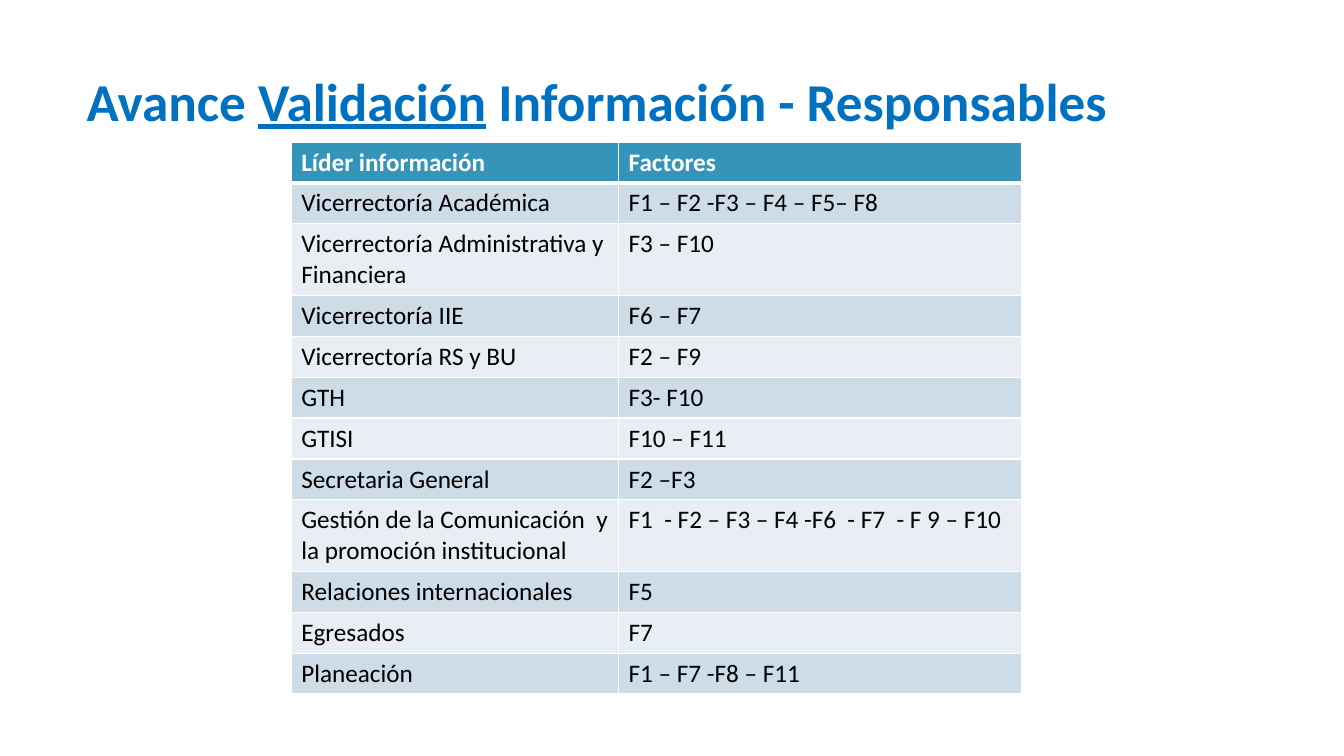
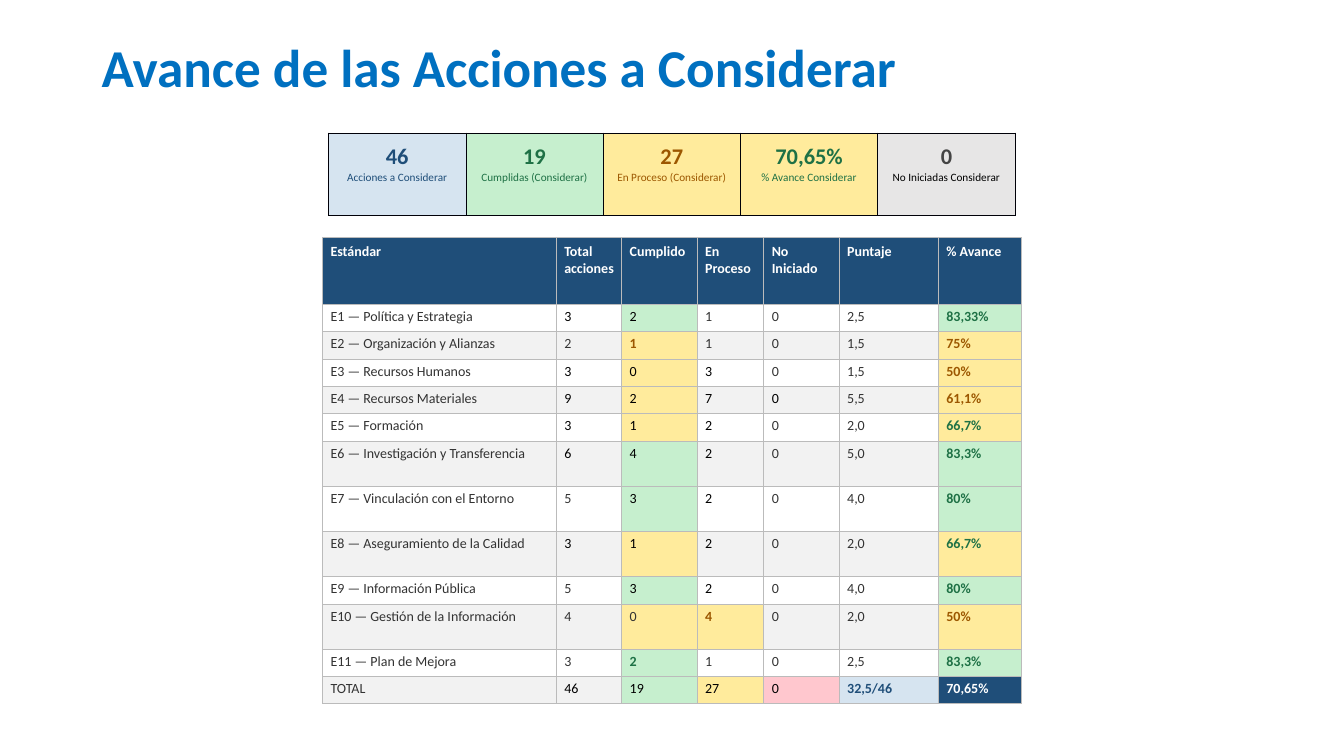
from lxml.etree import SubElement
from pptx import Presentation
from pptx.dml.color import RGBColor
from pptx.enum.text import MSO_ANCHOR, MSO_AUTO_SIZE, PP_ALIGN
from pptx.oxml.ns import qn
from pptx.util import Cm, Pt

# Colours
WHITE = RGBColor(0xFF, 0xFF, 0xFF)
BLACK = RGBColor(0x00, 0x00, 0x00)
TITLE_BLUE = RGBColor(0x00, 0x70, 0xC0)
TEAL = RGBColor(0x34, 0x94, 0xBA)
BLUE_BAND = RGBColor(0xCE, 0xDC, 0xE7)
PALE_BAND = RGBColor(0xE8, 0xEE, 0xF3)
NAVY = RGBColor(0x1F, 0x4E, 0x79)
LIGHT_BLUE = RGBColor(0xD6, 0xE4, 0xF0)
GREEN = RGBColor(0x1E, 0x71, 0x45)
LIGHT_GREEN = RGBColor(0xC6, 0xEF, 0xCE)
BROWN = RGBColor(0x9C, 0x57, 0x00)
YELLOW = RGBColor(0xFF, 0xEB, 0x9C)
PINK = RGBColor(0xFF, 0xC7, 0xCE)
LIGHT_GREY = RGBColor(0xE7, 0xE6, 0xE6)
GREY_BAND = RGBColor(0xF2, 0xF2, 0xF2)
GREY_LINE = RGBColor(0xBB, 0xBB, 0xBB)
MID_GREY = RGBColor(0x44, 0x44, 0x44)
DARK_GREY = RGBColor(0x33, 0x33, 0x33)
NEAR_BLACK = RGBColor(0x00, 0x00, 0x08)

# Content: who validates which factors
LEADERS_TITLE = [("Avance ", False), ("Validación", True),
                 (" Información - Responsables", False)]
LEADERS = [
    ("Líder información", "Factores"),
    ("Vicerrectoría Académica", "F1 – F2 -F3 – F4 – F5– F8"),
    ("Vicerrectoría Administrativa y Financiera", "F3 – F10"),
    ("Vicerrectoría IIE", "F6 – F7"),
    ("Vicerrectoría RS y BU", "F2 – F9"),
    ("GTH", "F3- F10"),
    ("GTISI", "F10 – F11"),
    ("Secretaria General", "F2 –F3"),
    ("Gestión de la Comunicación  y la promoción institucional",
     "F1  - F2 – F3 – F4 -F6  - F7  - F 9 – F10"),
    ("Relaciones internacionales", "F5"),
    ("Egresados", "F7"),
    ("Planeación", "F1 – F7 -F8 – F11"),
]
LEADER_WIDTHS = [8.25, 10.16]

# Content: summary figures (value, label, fill, value colour, label colour)
ACTIONS_TITLE = [("Avance de las Acciones a Considerar", False)]
SUMMARY = [
    ("46", "Acciones a Considerar", LIGHT_BLUE, NAVY, NAVY),
    ("19", "Cumplidas (Considerar)", LIGHT_GREEN, GREEN, GREEN),
    ("27", "En Proceso (Considerar)", YELLOW, BROWN, BROWN),
    ("70,65%", "% Avance Considerar", YELLOW, GREEN, GREEN),
    ("0", "No Iniciadas Considerar", LIGHT_GREY, MID_GREY, BLACK),
]

# Content: progress by standard; the last item holds one style letter per cell
HEADINGS = ["Estándar", "Total acciones", "Cumplido", "En Proceso",
            "No Iniciado", "Puntaje", "% Avance"]
STANDARDS = [
    ("E1 — Política y Estrategia", "3", "2", "1", "0", "2,5", "83,33%", "dkgdddG"),
    ("E2 — Organización y Alianzas", "2", "1", "1", "0", "1,5", "75%", "ddYdddY"),
    ("E3 — Recursos Humanos", "3", "0", "3", "0", "1,5", "50%", "dkykddY"),
    ("E4 — Recursos Materiales", "9", "2", "7", "0", "5,5", "61,1%", "dkykkdY"),
    ("E5 — Formación", "3", "1", "2", "0", "2,0", "66,7%", "dkykddM"),
    ("E6 — Investigación y Transferencia", "6", "4", "2", "0", "5,0", "83,3%", "dkgkddG"),
    ("E7 — Vinculación con el Entorno", "5", "3", "2", "0", "4,0", "80%", "ddgkddG"),
    ("E8 — Aseguramiento de la Calidad", "3", "1", "2", "0", "2,0", "66,7%", "dkykddM"),
    ("E9 — Información Pública", "5", "3", "2", "0", "4,0", "80%", "ddgkddG"),
    ("E10 — Gestión de la Información", "4", "0", "4", "0", "2,0", "50%", "ddnYddY"),
    ("E11 — Plan de Mejora", "3", "2", "1", "0", "2,5", "83,3%", "ddGdddG"),
    ("TOTAL", "46", "19", "27", "0", "32,5/46", "70,65%", "dkgyrbN"),
]
STANDARD_WIDTHS = [5.89, 1.65, 1.9, 1.68, 1.9, 2.5, 2.1]
TALL_ROWS = {6, 7, 8, 10}

# Style letter: (fill or None for the row band, text colour, bold)
CELL_STYLES = {
    "d": (None, DARK_GREY, False),
    "k": (None, BLACK, False),
    "g": (LIGHT_GREEN, BLACK, False),
    "G": (LIGHT_GREEN, GREEN, True),
    "y": (YELLOW, BLACK, False),
    "n": (YELLOW, DARK_GREY, False),
    "Y": (YELLOW, BROWN, True),
    "M": (YELLOW, GREEN, True),
    "r": (PINK, BLACK, False),
    "b": (LIGHT_BLUE, NAVY, True),
    "N": (NAVY, WHITE, True),
}


def write(paragraph, text, color, **formats):
    run = paragraph.add_run()
    run.text = text
    for key, value in {"name": "Calibri", **formats}.items():
        setattr(run.font, key, value)
    run.font.color.rgb = color


def add_titled_slide(prs, title_runs, left, top):
    slide = prs.slides.add_slide(prs.slide_layouts[5])
    title = slide.shapes.title
    place = {"left": Cm(left), "top": Cm(top), "width": Cm(29.21), "height": Cm(2)}
    for key, value in place.items():
        setattr(title, key, value)
    frame = title.text_frame
    frame.auto_size = MSO_AUTO_SIZE.NONE
    frame.vertical_anchor = MSO_ANCHOR.MIDDLE
    heading = frame.paragraphs[0]
    heading.alignment = PP_ALIGN.LEFT
    heading.line_spacing = 0.9
    for text, underline in title_runs:
        write(heading, text, TITLE_BLUE, size=Pt(38), bold=True, underline=underline)
    return slide


def add_grid(slide, left, top, widths, heights):
    table = slide.shapes.add_table(len(heights), len(widths), Cm(left), Cm(top),
                                   Cm(sum(widths)), Cm(sum(heights))).table
    table.horz_banding = False
    for column, width in zip(table.columns, widths):
        column.width = Cm(width)
    for row, height in zip(table.rows, heights):
        row.height = Cm(height)
    return table


def format_cell(cell, fill, line, points, margins=None, edges=None):
    """Borders come before the fill; edges overrides the width of single sides."""
    properties = cell._tc.get_or_add_tcPr()
    for side in "LRTB":
        width = (edges or {}).get(side, points)
        border = SubElement(properties, qn(f"a:ln{side}"), w=str(Pt(width)))
        SubElement(SubElement(border, qn("a:solidFill")), qn("a:srgbClr"), val=str(line))
    cell.fill.solid()
    cell.fill.fore_color.rgb = fill
    if margins:
        across, down = map(Cm, margins)
        cell.margin_left = cell.margin_right = across
        cell.margin_top = cell.margin_bottom = down


def add_leaders(slide):
    table = add_grid(slide, 7.34, 3.58, LEADER_WIDTHS, [1.03] * len(LEADERS))
    for r, texts in enumerate(LEADERS):
        header = r == 0
        fill = TEAL if header else (PALE_BAND, BLUE_BAND)[r % 2]
        edges = {"B": 3} if header else {"T": 3} if r == 1 else None
        for c, text in enumerate(texts):
            cell = table.cell(r, c)
            format_cell(cell, fill, WHITE, 1, edges=edges)
            write(cell.text_frame.paragraphs[0], text, WHITE if header else BLACK,
                  size=Pt(18), bold=header)


def add_summary(slide):
    table = add_grid(slide, 8.28, 3.35, [3.46] * len(SUMMARY), [2.08])
    for c, (value, label, fill, value_color, label_color) in enumerate(SUMMARY):
        cell = table.cell(0, c)
        format_cell(cell, fill, NEAR_BLACK, 0.5, (0.28, 0.25))
        figure = cell.text_frame.paragraphs[0]
        caption = cell.text_frame.add_paragraph()
        figure.alignment = caption.alignment = PP_ALIGN.CENTER
        write(figure, value, value_color, size=Pt(16), bold=True)
        write(caption, label, label_color, size=Pt(8), bold=False)


def add_standards(slide):
    heights = [1.68] + [1.14 if r in TALL_ROWS else 0.69
                        for r in range(1, len(STANDARDS) + 1)]
    table = add_grid(slide, 8.13, 5.99, STANDARD_WIDTHS, heights)
    rows = [(*HEADINGS, "N" * len(HEADINGS)), *STANDARDS]
    for r, (*texts, styles) in enumerate(rows):
        band = (GREY_BAND, WHITE)[r % 2]
        for c, (text, style) in enumerate(zip(texts, styles)):
            fill, color, bold = CELL_STYLES[style]
            cell = table.cell(r, c)
            format_cell(cell, fill or band, GREY_LINE, 0.75, (0.2, 0.1 if r else 0.15))
            write(cell.text_frame.paragraphs[0], text, color, size=Pt(10), bold=bold)


def main():
    prs = Presentation()
    prs.slide_width, prs.slide_height = Cm(33.87), Cm(19.05)
    add_leaders(add_titled_slide(prs, LEADERS_TITLE, 1.93, 1.63))
    actions = add_titled_slide(prs, ACTIONS_TITLE, 2.31, 0.76)
    add_summary(actions)
    add_standards(actions)
    prs.save("out.pptx")


if __name__ == "__main__":
    main()
